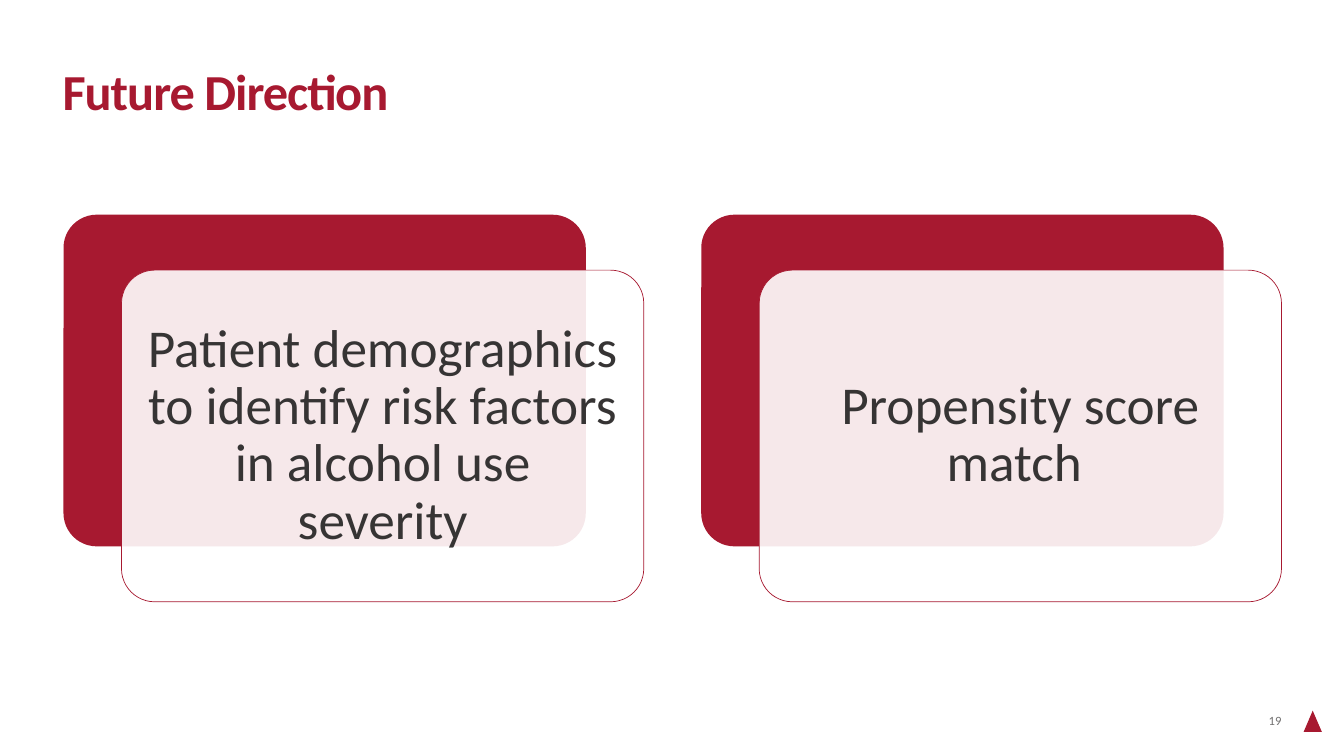
"""Build the Future Direction slide with two layered cards."""
from lxml.etree import SubElement
from pptx import Presentation
from pptx.dml.color import RGBColor
from pptx.enum.shapes import MSO_SHAPE
from pptx.enum.text import MSO_ANCHOR, MSO_AUTO_SIZE, PP_ALIGN
from pptx.oxml.ns import qn
from pptx.util import Inches, Pt

TITLE = "Future Direction"
CARDS = [
    "Patient demographics to identify risk factors in alcohol use severity",
    "Propensity score match ",
]
PAGE_NUMBER = "19"
RED, WHITE, GREY = "A71930", "FFFFFF", "363434"

CARD_LEFT, CARD_TOP, CARD_PITCH = 0.63, 2.13, 6.325
CARD_WIDTH, CARD_HEIGHT = 5.18, 3.29
SHIFT_X, SHIFT_Y, TEXT_INSET = 0.575, 0.55, 0.1


def paint(color_format, color, opacity=100):
    """Set a colour and, where it is see-through, its opacity."""
    color_format.rgb = RGBColor.from_string(color)
    if opacity < 100:
        for node in color_format._xFill.iter(qn("a:srgbClr")):
            SubElement(node, qn("a:alpha"), val=str(opacity * 1000))


def add_block(slide, kind, place, color, opacity=100, outline=None):
    """Add a filled preset shape with an optional thin outline."""
    block = slide.shapes.add_shape(kind, *map(Inches, place))
    block.shadow.inherit = False
    block.fill.solid()
    paint(block.fill.fore_color, color, opacity)
    if outline:
        block.line.width = Pt(0.5)
        paint(block.line.color, outline)
    else:
        block.line.fill.background()
    return block


def write(box, text, color, frame_format, para_format, font_format, opacity=100):
    """Put one formatted paragraph in a box."""
    frame = box.text_frame
    para = frame.paragraphs[0]
    span = para.add_run()
    span.text = text
    for target, values in (
        (frame, frame_format),
        (para, para_format),
        (span.font, {"name": "Calibri", **font_format}),
    ):
        for name, value in values.items():
            setattr(target, name, value)
    span.font.fill.solid()
    paint(span.font.fill.fore_color, color, opacity)
    return span


def margins(side, end):
    """Give the inner margins of a text frame."""
    return {
        "margin_left": Inches(side),
        "margin_right": Inches(side),
        "margin_top": Inches(end),
        "margin_bottom": Inches(end),
    }


def add_title(slide):
    """Place and format the title placeholder."""
    title = slide.shapes.title
    place = {"left": 0.62, "top": 0.66, "width": 12.08, "height": 0.36}
    for name, value in place.items():
        setattr(title, name, Inches(value))
    frame_format = {
        "auto_size": MSO_AUTO_SIZE.NONE,
        "vertical_anchor": MSO_ANCHOR.TOP,
        "word_wrap": True,
        **margins(0, 0),
    }
    para_format = {
        "alignment": PP_ALIGN.LEFT,
        "line_spacing": 0.9,
        "space_before": Pt(0),
        "space_after": Pt(6),
    }
    span = write(title, TITLE, RED, frame_format, para_format,
                 {"size": Pt(36), "bold": True})
    span.font._element.set("spc", "-70")


def add_card(slide, index, text):
    """Add a red block, the pale block over it and its text."""
    left = CARD_LEFT + index * CARD_PITCH
    front_left, front_top = left + SHIFT_X, CARD_TOP + SHIFT_Y
    size = (CARD_WIDTH, CARD_HEIGHT)
    rounded = MSO_SHAPE.ROUNDED_RECTANGLE
    back = add_block(slide, rounded, (left, CARD_TOP, *size), RED)
    front = add_block(slide, rounded, (front_left, front_top, *size), WHITE, 90, RED)
    for block in (back, front):
        block.adjustments[0] = 0.1
    place = (
        front_left + TEXT_INSET,
        front_top + TEXT_INSET,
        CARD_WIDTH - 2 * TEXT_INSET,
        CARD_HEIGHT - 2 * TEXT_INSET,
    )
    box = slide.shapes.add_textbox(*map(Inches, place))
    frame_format = {
        "word_wrap": True,
        "vertical_anchor": MSO_ANCHOR.MIDDLE,
        **margins(0.16, 0.16),
    }
    write(box, text, GREY, frame_format,
          {"alignment": PP_ALIGN.CENTER, "line_spacing": 0.9}, {"size": Pt(38)})


def add_footer(slide):
    """Add the page number and the plain mark beside it."""
    add_block(slide, MSO_SHAPE.ISOSCELES_TRIANGLE, (12.93, 7.05, 0.18, 0.21), RED)
    box = slide.shapes.add_textbox(*map(Inches, (12.18, 7.03, 0.53, 0.23)))
    frame_format = {
        "word_wrap": False,
        "vertical_anchor": MSO_ANCHOR.BOTTOM,
        **margins(0, 0.04),
    }
    write(box, PAGE_NUMBER, GREY, frame_format,
          {"alignment": PP_ALIGN.RIGHT}, {"size": Pt(9)}, opacity=70)


def main():
    """Build and save the deck."""
    deck = Presentation()
    deck.slide_width, deck.slide_height = Inches(13.33), Inches(7.5)
    slide = deck.slides.add_slide(deck.slide_layouts[5])
    add_footer(slide)
    for index, text in enumerate(CARDS):
        add_card(slide, index, text)
    add_title(slide)
    deck.save("out.pptx")


if __name__ == "__main__":
    main()
